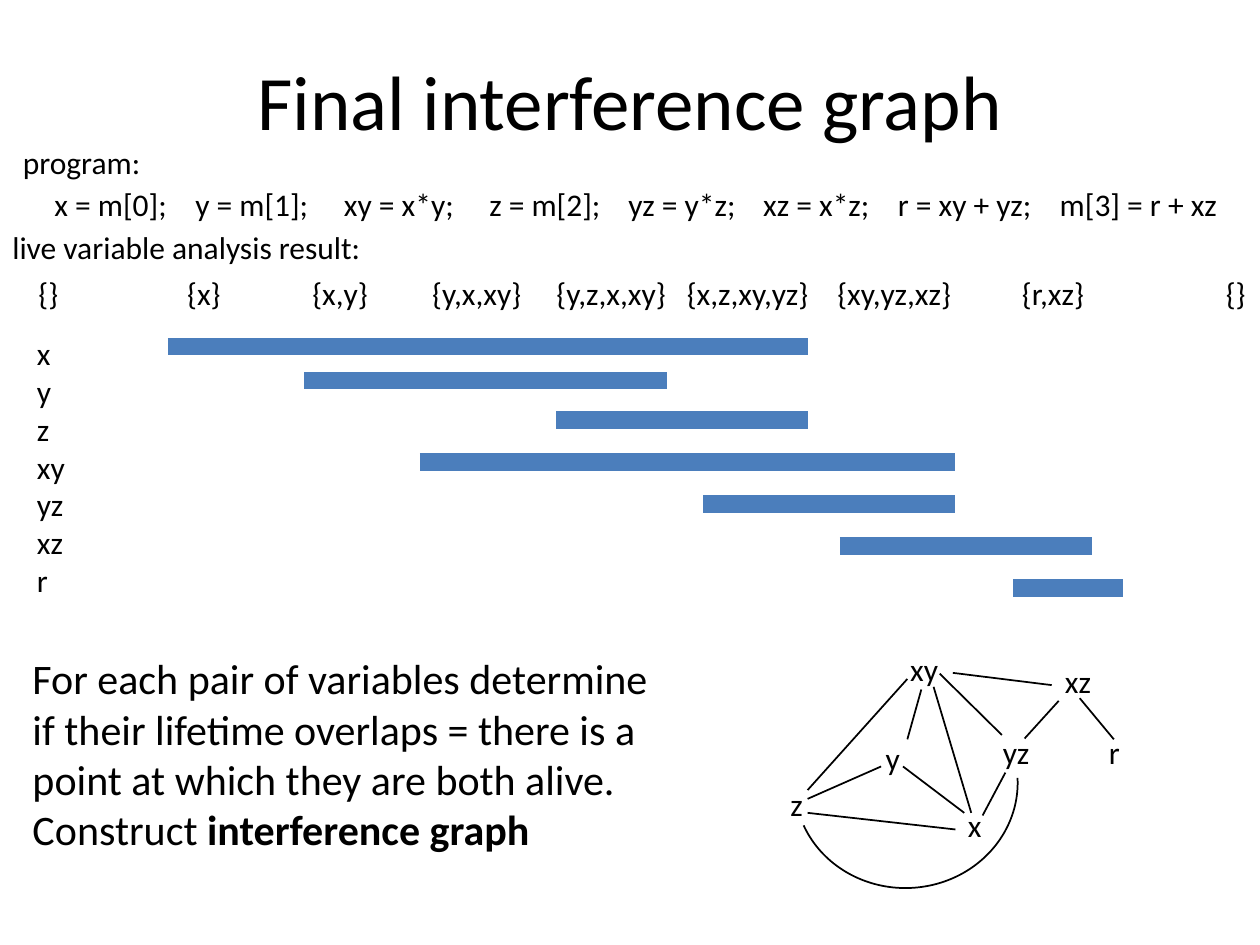
from lxml.etree import SubElement
from pptx import Presentation
from pptx.dml.color import RGBColor
from pptx.enum.shapes import MSO_CONNECTOR, MSO_SHAPE
from pptx.enum.text import MSO_ANCHOR, MSO_AUTO_SIZE, PP_ALIGN
from pptx.oxml.ns import qn
from pptx.util import Pt

THEME = {"font": "Calibri", "ink": "000000", "bar": "4B7EBC",
         "title": 44, "note": 24, "body": 18, "bar_w": 10, "edge_w": 1}

TITLE = "Final interference graph"
CODE = ["x = m[0];", "y = m[1];", "xy = x*y;", "z = m[2];", "yz = y*z;",
        "xz = x*z;", "r = xy + yz;", "m[3] = r + xz"]
CODE_TABS = [80.5, 165.5, 248.5, 328, 405, 482, 574.5]
LIVE = ["{}", "{x}", "{x,y}", "{y,x,xy}", "{y,z,x,xy}", "{x,z,xy,yz}",
        "{xy,yz,xz}", "{r,xz}", "{}"]
LIVE_TABS = [85, 156.5, 225, 296, 370.5, 456.5, 562, 678.5]
NOTE = ["For each pair of variables determine",
        "if their lifetime overlaps = there is a \vpoint at which they are both alive.",
        "Construct "]
TERM = "interference graph"

# variable: (start, end, height on the slide)
SPANS = {"x": (96, 462, 198), "y": (174, 381, 217.5), "z": (318, 462, 240),
         "xy": (240, 546, 264), "yz": (402, 546, 288),
         "xz": (480, 624, 312), "r": (579, 642, 336)}

# variable: (left, top, width)
NODES = {"y": (499, 419, 27.5), "yz": (566, 415.5, 35.5), "x": (546, 457, 26.5),
         "z": (444.5, 445, 26), "xz": (601.5, 374.5, 35.5),
         "xy": (513, 368, 36), "r": (626.5, 415.5, 24.5)}
NODE_H = 34
EDGES = [(533.5, 392.5, 555, 464.5), (546, 474, 461.5, 464.5),
         (516, 438, 551, 464.5), (526.5, 394, 518.5, 422.5),
         (461.5, 456.5, 503.5, 438), (518.5, 388, 461.5, 451.5),
         (537, 385, 572.5, 420), (574.5, 441.5, 561.5, 466),
         (544.5, 384.5, 601, 391.5), (605, 400.5, 585.5, 422),
         (617, 399, 636.5, 422.5)]
ARC = {"box": (458, 384, 119.5, 127.5), "turn": 87.1, "ends": (162, 42.39)}


def style(text, size):
    for par in text.paragraphs:
        for run in par.runs:
            for key, val in {"name": THEME["font"], "size": Pt(size)}.items():
                setattr(run.font, key, val)
            run.font.color.rgb = RGBColor.from_string(THEME["ink"])


def write(home, box, lines, size=THEME["body"], **frame):
    text = home.add_textbox(*map(Pt, box)).text_frame
    values = {"word_wrap": True, "auto_size": MSO_AUTO_SIZE.SHAPE_TO_FIT_TEXT}
    for key, val in (values | frame).items():
        setattr(text, key, val)
    for i, line in enumerate(lines):
        par = text.add_paragraph() if i else text.paragraphs[0]
        par.text = line
    style(text, size)
    return text


def add_tabs(text, stops):
    tabs = SubElement(text.paragraphs[0]._p.get_or_add_pPr(), qn("a:tabLst"))
    for stop in stops:
        SubElement(tabs, qn("a:tab"), pos=str(int(Pt(stop))), algn="l")


def draw(home, ends, color, width):
    link = home.add_connector(MSO_CONNECTOR.STRAIGHT, *map(Pt, ends))
    link.line.color.rgb = RGBColor.from_string(color)
    link.line.width = Pt(width)
    SubElement(link._element.spPr, qn("a:effectLst"))


def main():
    deck = Presentation()
    deck.slide_width, deck.slide_height = Pt(720), Pt(540)
    page = deck.slides.add_slide(deck.slide_layouts[6]).shapes

    title = write(page, (36, 21.5, 648, 70.5), [TITLE], THEME["title"],
                  auto_size=MSO_AUTO_SIZE.NONE, vertical_anchor=MSO_ANCHOR.MIDDLE)
    title.paragraphs[0].alignment = PP_ALIGN.CENTER

    add_tabs(write(page, (24, 102, 690, 29), ["\t".join(CODE)]), CODE_TABS)
    write(page, (14, 187.5, 48, 160), SPANS)
    add_tabs(write(page, (6, 153, 714, 29), ["\t".join(LIVE)],
                   margin_left=Pt(16), margin_right=0), LIVE_TABS)
    write(page, (0, 127, 216, 29), ["live variable analysis result:"])
    write(page, (6, 78, 216, 29), ["program:"])

    for start, end, y in SPANS.values():
        draw(page, (start, y, end, y), THEME["bar"], THEME["bar_w"])

    note = write(page, (11.5, 369.5, 380, 124), NOTE, THEME["note"])
    term = note.paragraphs[-1].add_run()
    term.text = TERM
    term.font.bold = True
    style(note, THEME["note"])

    graph = page.add_group_shape().shapes
    for name, place in NODES.items():
        write(graph, (*place, NODE_H), [name], word_wrap=False)
    for ends in EDGES:
        draw(graph, ends, THEME["ink"], THEME["edge_w"])

    arc = graph.add_shape(MSO_SHAPE.ARC, *map(Pt, ARC["box"]))
    arc.rotation = ARC["turn"]
    for i, end in enumerate(ARC["ends"]):
        arc.adjustments[i] = end
    arc.shadow.inherit = False
    arc.fill.background()
    arc.line.color.rgb = RGBColor.from_string(THEME["ink"])
    arc.line.width = Pt(THEME["edge_w"])

    deck.save("out.pptx")


if __name__ == "__main__":
    main()
